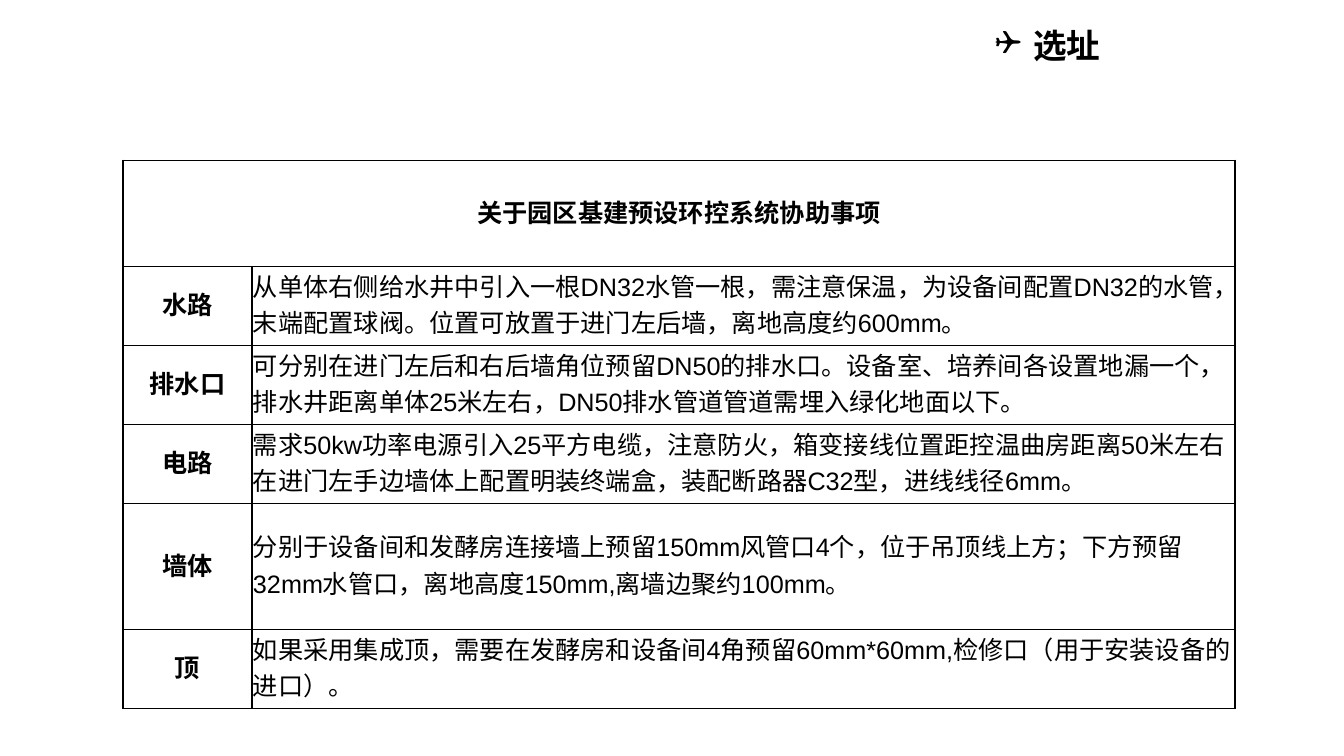
"""Build the site selection slide with its table of building preparations."""
from dataclasses import dataclass

from lxml.etree import SubElement
from pptx import Presentation
from pptx.dml.color import RGBColor
from pptx.enum.text import MSO_ANCHOR, MSO_AUTO_SIZE, PP_ALIGN
from pptx.oxml.ns import qn
from pptx.util import Emu, Inches, Pt

SLIDE_WIDTH, SLIDE_HEIGHT = Inches(13.33), Inches(7.5)
GRID_STEPS = 100
BLACK = "000000"
LATIN_FONT, CHINESE_FONT = "Arial", "Noto Sans CJK SC"
TITLE_INDENT = Inches(0.38)
TABLE_LEFT, TABLE_TOP = 9.15, 21.2
TABLE_COLUMNS = (9.6, 73.14)
HEADING = "关于园区基建预设环控系统协助事项"
HEADING_ROWS = 14


@dataclass(frozen=True)
class Requirement:
    label: str
    detail: str
    rows: float = 10


REQUIREMENTS = (
    Requirement("水路", "从单体右侧给水井中引入一根DN32水管一根，需注意保温，为设备间配置DN32的水管，"
                "末端配置球阀。位置可放置于进门左后墙，离地高度约600mm。"),
    Requirement("排水口", "可分别在进门左后和右后墙角位预留DN50的排水口。设备室、培养间各设置地漏一个，"
                "排水井距离单体25米左右，DN50排水管道管道需埋入绿化地面以下。"),
    Requirement("电路", "需求50kw功率电源引入25平方电缆，注意防火，箱变接线位置距控温曲房距离50米左右"
                "在进门左手边墙体上配置明装终端盒，装配断路器C32型，进线线径6mm。"),
    Requirement("墙体", "分别于设备间和发酵房连接墙上预留150mm风管口4个，位于吊顶线上方；"
                "下方预留32mm水管口，离地高度150mm,离墙边聚约100mm。", 16.67),
    Requirement("顶", "如果采用集成顶，需要在发酵房和设备间4角预留60mm*60mm,检修口（用于安装设备的进口）。"),
)


def across(columns: float) -> Emu:
    """Turn grid columns into a length."""
    return Emu(round(SLIDE_WIDTH * columns / GRID_STEPS))


def down(rows: float) -> Emu:
    """Turn grid rows into a length."""
    return Emu(round(SLIDE_HEIGHT * rows / GRID_STEPS))


def color(value: str) -> RGBColor:
    """Read a colour from its hex string."""
    return RGBColor.from_string(value)


def style_runs(para, size: float, bold: bool, latin: str) -> None:
    """Give every run of a paragraph its font."""
    for span in para.runs:
        span.font.size = Pt(size)
        span.font.bold = bold
        span.font.name = latin
        span.font.color.rgb = color(BLACK)
        SubElement(span.font._element, qn("a:ea"), typeface=CHINESE_FONT)


def add_title(page, text: str) -> None:
    """Place the bulleted slide title."""
    box = page.shapes.add_textbox(across(73.29), 0, across(23.7), down(17.47))
    frame = box.text_frame
    frame.word_wrap = True
    frame.auto_size = MSO_AUTO_SIZE.NONE
    frame.text = text
    para = frame.paragraphs[0]
    para.line_spacing = 1.5
    properties = para._p.get_or_add_pPr()
    properties.set("marL", str(TITLE_INDENT))
    properties.set("indent", str(-TITLE_INDENT))
    SubElement(properties, qn("a:buFont"), typeface="Wingdings")
    SubElement(properties, qn("a:buChar"), char="❑")
    style_runs(para, 24, True, CHINESE_FONT)


def frame_cell(cell) -> None:
    """Draw thin black borders around an unfilled cell."""
    properties = cell._tc.get_or_add_tcPr()
    for side in ("lnL", "lnR", "lnT", "lnB"):
        line = SubElement(properties, qn(f"a:{side}"), w=str(Pt(1)))
        fill = SubElement(line, qn("a:solidFill"))
        SubElement(fill, qn("a:srgbClr"), val=BLACK)
    cell.fill.background()


def fill_cell(cell, text: str, is_label: bool) -> None:
    """Write a label or a detail into a cell."""
    cell.vertical_anchor = MSO_ANCHOR.MIDDLE
    cell.margin_left = cell.margin_right = cell.margin_top = Inches(0.01)
    cell.margin_bottom = Inches(0.05)
    cell.text_frame.text = text
    para = cell.text_frame.paragraphs[0]
    para.alignment = PP_ALIGN.CENTER if is_label else PP_ALIGN.LEFT
    style_runs(para, 18, is_label, LATIN_FONT)


def add_requirements(page) -> None:
    """Place the table of requirements under its merged heading."""
    heights = (HEADING_ROWS, *(item.rows for item in REQUIREMENTS))
    table = page.shapes.add_table(
        len(heights), len(TABLE_COLUMNS), across(TABLE_LEFT), down(TABLE_TOP),
        across(sum(TABLE_COLUMNS)), down(sum(heights))).table
    table.first_row = table.horz_banding = False
    for column, width in zip(table.columns, TABLE_COLUMNS):
        column.width = across(width)
    for row, height in zip(table.rows, heights):
        row.height = down(height)
        for cell in row.cells:
            frame_cell(cell)
    table.cell(0, 0).merge(table.cell(0, 1))
    fill_cell(table.cell(0, 0), HEADING, True)
    for index, item in enumerate(REQUIREMENTS, start=1):
        fill_cell(table.cell(index, 0), item.label, True)
        fill_cell(table.cell(index, 1), item.detail, False)


def main() -> None:
    """Build and save the deck."""
    deck = Presentation()
    deck.slide_width, deck.slide_height = SLIDE_WIDTH, SLIDE_HEIGHT
    page = deck.slides.add_slide(deck.slide_layouts[6])
    add_title(page, "选址")
    add_requirements(page)
    deck.save("out.pptx")


if __name__ == "__main__":
    main()
